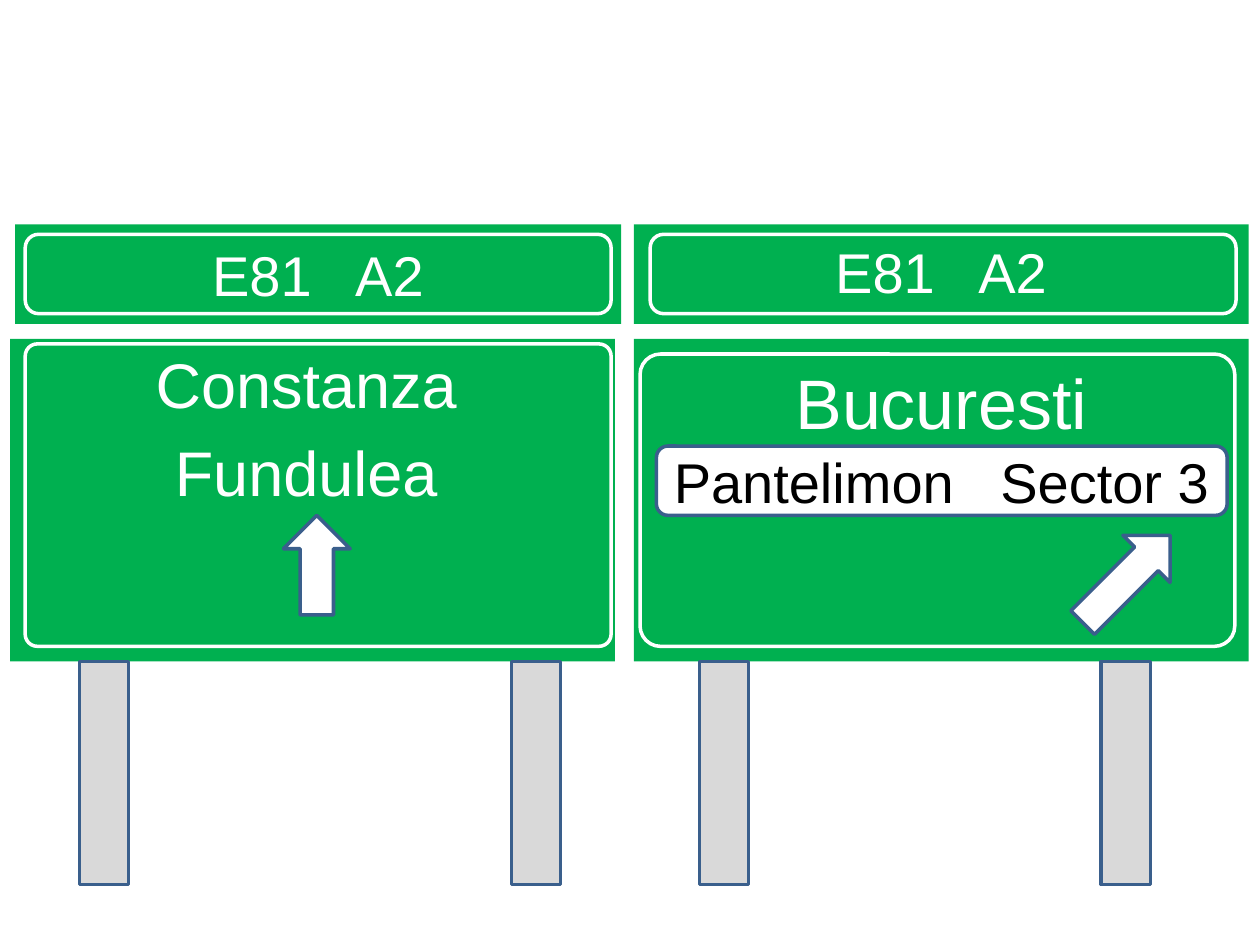
"""Build a slide with two motorway direction signs on posts."""
from lxml.etree import SubElement
from pptx import Presentation
from pptx.dml.color import RGBColor
from pptx.enum.shapes import MSO_SHAPE as SHAPE
from pptx.enum.text import MSO_ANCHOR as ANCHOR, MSO_AUTO_SIZE as AUTO_SIZE, PP_ALIGN as ALIGN
from pptx.oxml.ns import qn
from pptx.util import Inches, Pt

COLORS = {"green": "00B050", "white": "FFFFFF", "black": "000000", "post": "D9D9D9", "edge": "3A5F8C"}


def add_part(kind, box, fill, line):
    shape = slide.shapes.add_shape(kind, *[Inches(length) for length in box])
    shape.shadow.inherit = False
    if fill:
        shape.fill.solid()
        shape.fill.fore_color.rgb = RGBColor.from_string(COLORS[fill])
    else:
        shape.fill.background()
    shape.line.color.rgb = RGBColor.from_string(COLORS[line])
    shape.line.width = Pt(2)
    return shape


def write_text(shape, lines, size, color, anchor, insets):
    frame = shape.text_frame
    frame.text = "\n".join(lines)
    frame.word_wrap = True
    frame.auto_size = AUTO_SIZE.NONE
    frame.vertical_anchor = anchor
    frame.margin_left, frame.margin_top, frame.margin_right, frame.margin_bottom = [
        Inches(inset) for inset in insets]
    for paragraph in frame.paragraphs:
        paragraph.alignment = ALIGN.CENTER
        paragraph.font.name = "Arial"
        paragraph.font.size = Pt(size)
        paragraph.font.bold = False
        paragraph.font.color.rgb = RGBColor.from_string(COLORS[color])


presentation = Presentation()
presentation.slide_width, presentation.slide_height = Inches(10), Inches(7.5)
slide = presentation.slides.add_slide(presentation.slide_layouts.get_by_name("Comparison"))
title = slide.shapes.title
title.element.getparent().remove(title.element)

boards = [
    (1, (0.12, 1.78, 4.81, 0.79), ["E81   A2"], 32, ANCHOR.MIDDLE, (0.1, 0.2, 0.1, 0.2)),
    (2, (0.08, 2.69, 4.8, 2.56), ["Constanza", "Fundulea"], 36, ANCHOR.TOP, (0, 0.05, 0.1, 0.05)),
    (3, (5.03, 1.78, 4.88, 0.79), ["E81   A2"], 32, ANCHOR.MIDDLE, (0.1, 0.12, 0.1, 0.16)),
    (4, (5.03, 2.69, 4.88, 2.56), ["Bucuresti"], 40, ANCHOR.TOP, (0.1, 0.16, 0.1, 0.05)),
]
placeholders = {shape.placeholder_format.idx: shape for shape in slide.placeholders}
for index, box, lines, size, anchor, insets in boards:
    board = placeholders[index]
    board.left, board.top, board.width, board.height = [Inches(length) for length in box]
    board.fill.solid()
    board.fill.fore_color.rgb = RGBColor.from_string(COLORS["green"])
    write_text(board, lines, size, "white", anchor, insets)
    for paragraph in board.text_frame.paragraphs:
        properties = paragraph._p.get_or_add_pPr()
        properties.set("marL", "0")
        properties.set("indent", "0")
        bullet = SubElement(properties, qn("a:buNone"))
        properties.remove(bullet)
        properties.insert_element_before(bullet, "a:tabLst", "a:defRPr", "a:extLst")

for left in (0.63, 4.06, 5.55, 8.74):
    add_part(SHAPE.RECTANGLE, (left, 5.25, 0.39, 1.77), "post", "edge")

add_part(SHAPE.UP_ARROW, (2.25, 4.09, 0.53, 0.79), "white", "edge")
exit_arrow = add_part(SHAPE.RIGHT_ARROW, (8.45, 4.33, 0.98, 0.53), "white", "edge")
exit_arrow.rotation = 315

district = add_part(SHAPE.ROUNDED_RECTANGLE, (5.21, 3.54, 4.53, 0.55), "white", "edge")
write_text(district, ["Pantelimon   Sector 3"], 32, "black", ANCHOR.MIDDLE, (0.1, 0.05, 0.1, 0.05))

borders = [
    ((0.2, 1.86, 4.65, 0.63), 0.17),
    ((5.16, 1.86, 4.65, 0.63), 0.17),
    ((0.2, 2.73, 4.65, 2.4), 0.04),
    ((5.08, 2.81, 4.72, 2.32), 0.07),
]
for box, rounding in borders:
    border = add_part(SHAPE.ROUNDED_RECTANGLE, box, None, "white")
    border.adjustments[0] = rounding

presentation.save("out.pptx")
